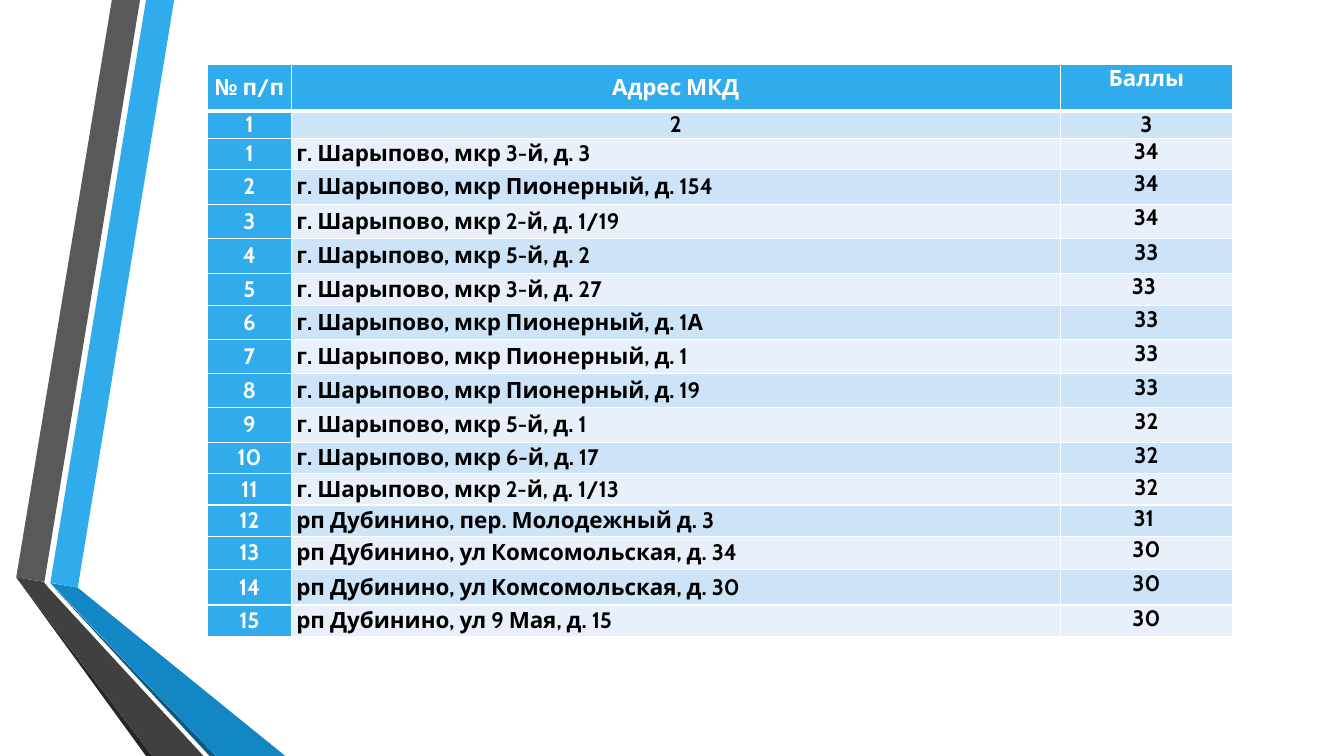
from lxml import etree
from pptx import Presentation
from pptx.dml.color import RGBColor
from pptx.enum.text import MSO_ANCHOR as Anchor, PP_ALIGN as Align
from pptx.oxml.ns import qn
from pptx.util import Cm, Pt

WHITE = RGBColor(0xFF, 0xFF, 0xFF)
BLACK = RGBColor(0x00, 0x00, 0x00)
BLUE = RGBColor(0x30, 0xAC, 0xEC)
DEEP_BLUE = RGBColor(0x12, 0x87, 0xC3)
DARK_BLUE = RGBColor(0x0C, 0x5A, 0x82)
GREY = RGBColor(0x59, 0x59, 0x59)
DARK_GREY = RGBColor(0x40, 0x40, 0x40)
NEAR_BLACK = RGBColor(0x26, 0x26, 0x26)
BAND_DARK = RGBColor(0xCD, 0xE3, 0xF8)
BAND_LIGHT = RGBColor(0xE8, 0xF1, 0xFB)

prs = Presentation()
prs.slide_width, prs.slide_height = Cm(33.87), Cm(19.05)
slide = prs.slides.add_slide(prs.slide_layouts[6])

# Folded ribbons on the left, from back to front, corners in cm
ribbons = [
    (BLUE, [(1.27, 14.68), (1.96, 14.81), (4.39, 0), (3.68, 0)]),
    (GREY, [(3.53, 0), (2.82, 0), (0.41, 14.55), (1.12, 14.66)]),
    (NEAR_BLACK, [(0.41, 14.55), (3.68, 19.05), (3.84, 19.05)]),
    (DARK_BLUE, [(1.27, 14.71), (5.28, 19.05), (5.44, 19.05)]),
    (DEEP_BLUE, [(1.27, 14.69), (5.44, 19.05), (7.19, 19.05), (1.96, 14.81)]),
    (DARK_GREY, [(5.13, 19.05), (1.22, 14.81), (1.1, 14.66), (0.41, 14.55),
                 (3.84, 19.05)]),
]
for color, corners in ribbons:
    points = [(Cm(x), Cm(y)) for x, y in corners]
    builder = slide.shapes.build_freeform(*points[0])
    builder.add_line_segments(points[1:], close=True)
    ribbon = builder.convert_to_shape()
    ribbon.shadow.inherit = False
    ribbon.fill.solid()
    ribbon.fill.fore_color.rgb = color
    ribbon.line.fill.background()

# Table content
houses = [
    ("г. Шарыпово, мкр 3-й, д. 3", "34"),
    ("г. Шарыпово, мкр Пионерный, д. 154", "34"),
    ("г. Шарыпово, мкр 2-й, д. 1/19", "34"),
    ("г. Шарыпово, мкр 5-й, д. 2", "33"),
    ("г. Шарыпово, мкр 3-й, д. 27", "33 "),
    ("г. Шарыпово, мкр Пионерный, д. 1А", "33"),
    ("г. Шарыпово, мкр Пионерный, д. 1", "33"),
    ("г. Шарыпово, мкр Пионерный, д. 19", "33"),
    ("г. Шарыпово, мкр 5-й, д. 1", "32"),
    ("г. Шарыпово, мкр 6-й, д. 17", "32"),
    ("г. Шарыпово, мкр 2-й, д. 1/13", "32"),
    ("рп Дубинино, пер. Молодежный д. 3", "31 "),
    ("рп Дубинино, ул Комсомольская, д. 34", "30"),
    ("рп Дубинино, ул Комсомольская, д. 30", "30"),
    ("рп Дубинино, ул 9 Мая, д. 15", "30"),
]
rows = [("№ п/п", "Адрес МКД", "Баллы"), ("1", "2", "3")]
rows += [(str(n), address, score) for n, (address, score) in enumerate(houses, 1)]
column_widths = [2.11, 19.38, 4.34]
row_heights = [1.17, 0.67, 0.79, 0.87, 0.87, 0.87, 0.82, 0.86, 0.85, 0.86,
               0.87, 0.79, 0.79, 0.79, 0.84, 0.89, 0.79]

scores = slide.shapes.add_table(
    len(rows), len(column_widths), Cm(5.23), Cm(1.63),
    Cm(sum(column_widths)), Cm(sum(row_heights))).table
for column, width in zip(scores.columns, column_widths):
    column.width = Cm(width)
for row, height in zip(scores.rows, row_heights):
    row.height = Cm(height)


def add_border(cell, side, width):
    line = etree.SubElement(cell._tc.get_or_add_tcPr(), qn(f"a:{side}"), w=str(Pt(width)))
    fill = etree.SubElement(line, qn("a:solidFill"))
    etree.SubElement(fill, qn("a:srgbClr"), val=str(WHITE))


# Cells: blue header row and number column, banded body
for r, texts in enumerate(rows):
    for c, text in enumerate(texts):
        cell = scores.cell(r, c)
        heading = r == 0 or c == 0
        cell.margin_left = cell.margin_right = Cm(0.13)
        cell.margin_top = cell.margin_bottom = 0
        cell.vertical_anchor = Anchor.TOP if c == 2 else Anchor.MIDDLE

        add_border(cell, "lnL", 1)
        add_border(cell, "lnR", 1)
        add_border(cell, "lnT", 3 if r == 1 else 1)
        add_border(cell, "lnB", 3 if r == 0 else 1)
        cell.fill.solid()
        cell.fill.fore_color.rgb = BLUE if heading else BAND_DARK if r % 2 else BAND_LIGHT

        paragraph = cell.text_frame.paragraphs[0]
        paragraph.alignment = Align.LEFT if c == 1 and r > 1 else Align.CENTER
        run = paragraph.add_run()
        run.text = text
        run.font.name = "Cabin"
        run.font.size = Pt(16)
        run.font.bold = True
        run.font.color.rgb = WHITE if heading else BLACK

prs.save("out.pptx")
